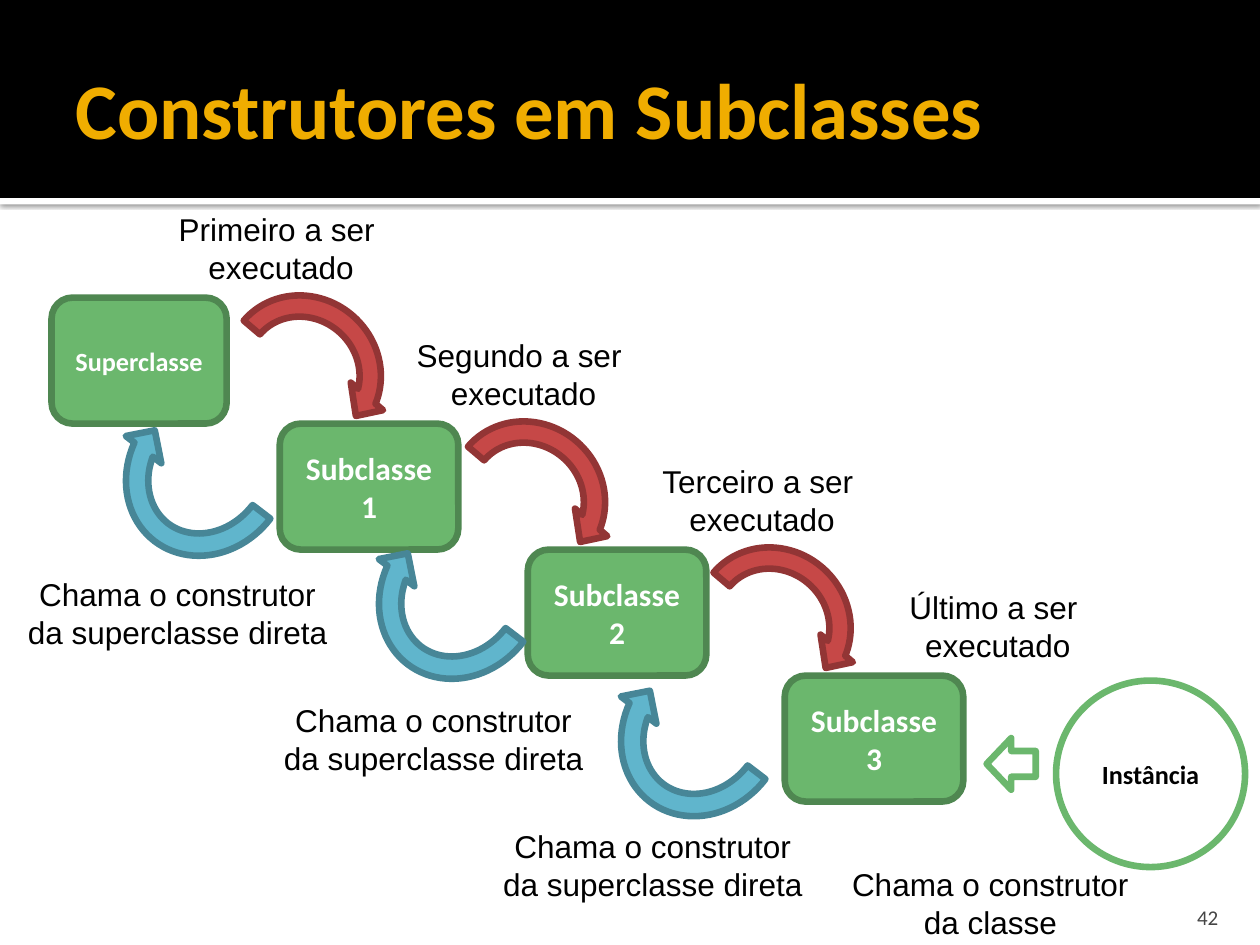
from typing import NamedTuple

from lxml import etree
from pptx import Presentation
from pptx.dml.color import RGBColor
from pptx.enum.shapes import MSO_SHAPE
from pptx.enum.text import MSO_ANCHOR, MSO_AUTO_SIZE, PP_ALIGN
from pptx.oxml import parse_xml
from pptx.oxml.ns import nsdecls
from pptx.util import Cm, Pt

RECT, ROUNDED, OVAL = MSO_SHAPE.RECTANGLE, MSO_SHAPE.ROUNDED_RECTANGLE, MSO_SHAPE.OVAL
CURVED, LEFT_ARROW = MSO_SHAPE.CIRCULAR_ARROW, MSO_SHAPE.LEFT_ARROW
TOP, MIDDLE, BOTTOM = MSO_ANCHOR.TOP, MSO_ANCHOR.MIDDLE, MSO_ANCHOR.BOTTOM
LEFT, CENTER, RIGHT = PP_ALIGN.LEFT, PP_ALIGN.CENTER, PP_ALIGN.RIGHT
GROW = MSO_AUTO_SIZE.SHAPE_TO_FIT_TEXT

GREEN, DARK_GREEN = "6BB76D", "4F8751"
BLUE, DARK_BLUE = "60B5CC", "478697"
RED, DARK_RED = "C64847", "923535"
WHITE, BLACK, GOLD, GRAY = "FFFFFF", "000000", "F0AD00", "454545"
OUTLINE = 3.78
STAIR_RISE = 2.54
CAPTION_HEIGHT = 1.8
DIRECT_CALL = ("Chama o construtor", "da superclasse direta")


class Box(NamedTuple):
    """A rectangle in centimetres."""

    left: float
    top: float
    width: float
    height: float

    def inside(self, dx, dy, width, height):
        """Return a box offset from this box's top left corner."""
        return Box(self.left + dx, self.top + dy, width, height)

    def lengths(self):
        """Return the four lengths for python-pptx."""
        return [Cm(value) for value in self]


class Step(NamedTuple):
    """One class of the staircase, with offsets from its left edge."""

    name: str
    size: int
    left: float
    width: float
    order: str
    order_dx: float
    order_width: float


class Call(NamedTuple):
    """The arrows and caption linking a class to the next one."""

    red_dx: float
    blue_dx: float
    blue_dy: float
    caption_dx: float


STEPS = [
    Step("Superclasse", 15, 1.04, 3.53, "Primeiro a ser ", 2.29, 4.67),
    Step("Subclasse1", 18, 5.64, 3.6, "Segundo a ser ", 2.49, 4.85),
    Step("Subclasse2", 18, 10.64, 3.6, "Terceiro a ser ", 2.44, 4.57),
    Step("Subclasse3", 18, 15.82, 3.6, "Último a ser ", 2.24, 4.11),
]
CALLS = [
    Call(3.28, 1.35, 1.49, -0.76),
    Call(3.2, 1.85, 1.43, -0.2),
    Call(3.15, 1.73, 1.66, -0.78),
]


def color(hex_value):
    """Return the colour for a hex string."""
    return RGBColor.from_string(hex_value)


def write(shape, *lines, font="Calibri", size=18, ink=BLACK, bold=False,
          align=CENTER, anchor=MIDDLE, wrap=True):
    """Write the lines as paragraphs of the shape."""
    frame = shape.text_frame
    frame.word_wrap = wrap
    frame.vertical_anchor = anchor
    for index, line in enumerate(lines):
        paragraph = frame.add_paragraph() if index else frame.paragraphs[0]
        paragraph.alignment = align
        run = paragraph.add_run()
        run.text = line
        run.font.name = font
        run.font.size = Pt(size)
        run.font.bold = bold
        run.font.color.rgb = color(ink)
    return frame


def draw(slide, preset, box, fill, line=None, rotation=0):
    """Draw a preset shape without shadow."""
    shape = slide.shapes.add_shape(preset, *box.lengths())
    shape.shadow.inherit = False
    shape.fill.solid()
    shape.fill.fore_color.rgb = color(fill)
    if line:
        shape.line.color.rgb = color(line)
        shape.line.width = Pt(OUTLINE)
    else:
        shape.line.fill.background()
    shape.rotation = rotation
    return shape


def add_caption(slide, box, *lines):
    """Add a centred caption that does not wrap."""
    caption = slide.shapes.add_textbox(*box.lengths())
    frame = write(caption, *lines, font="Arial", anchor=TOP, wrap=False)
    frame.auto_size = GROW


def add_shadow(shape):
    """Cast a soft shadow straight down."""
    effects = shape._element.spPr.find("{*}effectLst")
    effects.append(parse_xml(
        f'<a:outerShdw {nsdecls("a")} blurRad="{Pt(2.5)}" dist="{Pt(0.8)}" dir="5400000"/>'))
    ink = etree.SubElement(effects[0], effects.tag.replace("effectLst", "srgbClr"), val=BLACK)
    etree.SubElement(ink, effects.tag.replace("effectLst", "alpha"), val="60000")


def add_header(slide, box):
    """Draw the title band and its white edge."""
    edge = draw(slide, RECT, box.inside(0, box.height, box.width, 0.13), WHITE)
    add_shadow(edge)
    draw(slide, RECT, box, BLACK)
    title = slide.shapes.add_textbox(*box.inside(1.27, 0.43, 21.92, 3.48).lengths())
    frame = write(title, "Construtores em Subclasses", size=45, ink=GOLD, bold=True, align=LEFT)
    frame.margin_right = Cm(0.13)


def add_page_number(slide, box):
    """Write the page number at the bottom right."""
    number = slide.shapes.add_textbox(*box.lengths())
    frame = write(number, "42", size=12, ink=GRAY, align=RIGHT, anchor=BOTTOM)
    frame.margin_bottom = 0


def add_step(slide, box, step):
    """Draw a class and the caption of its turn."""
    node = draw(slide, ROUNDED, box, GREEN, DARK_GREEN)
    write(node, step.name, size=step.size, ink=WHITE, bold=True)
    add_caption(slide, box.inside(step.order_dx, -1.89, step.order_width, CAPTION_HEIGHT),
                step.order, "executado")


def add_call(slide, box, call):
    """Draw the call to the superclass and the way back."""
    draw(slide, CURVED, box.inside(call.blue_dx, call.blue_dy, 3.61, 4.01), BLUE, DARK_BLUE, 217.4)
    draw(slide, CURVED, box.inside(call.red_dx, -0.22, 3.61, 3.43), RED, DARK_RED, 40.4)
    add_caption(slide, box.inside(call.caption_dx, 5.47, 6.6, CAPTION_HEIGHT), *DIRECT_CALL)


def add_instance(slide, box):
    """Draw the instance, its arrow and its caption."""
    add_caption(slide, box.inside(-4.4, 3.6, 6.15, CAPTION_HEIGHT),
                "Chama o construtor", "da classe")
    instance = draw(slide, OVAL, box, WHITE, GREEN)
    write(instance, "Instância", size=15, bold=True)
    draw(slide, LEFT_ARROW, box.inside(-1.4, 1.16, 0.99, 1.04), WHITE, GREEN)


def main():
    """Build the slide and save it."""
    deck = Presentation()
    deck.slide_width, deck.slide_height = Cm(25.4), Cm(19.05)
    slide = deck.slides.add_slide(deck.slide_layouts[6])
    add_header(slide, Box(0, 0, 25.4, 3.99))
    add_page_number(slide, Box(22.78, 17.98, 2.03, 0.76))
    stairs = [Box(step.left, 6 + index * STAIR_RISE, step.width, 2.54)
              for index, step in enumerate(STEPS)]
    for box, step in zip(stairs, STEPS):
        add_step(slide, box, step)
    for box, call in zip(stairs, CALLS):
        add_call(slide, box, call)
    add_instance(slide, Box(21.29, 13.72, 3.81, 3.76))
    deck.save("out.pptx")


if __name__ == "__main__":
    main()
